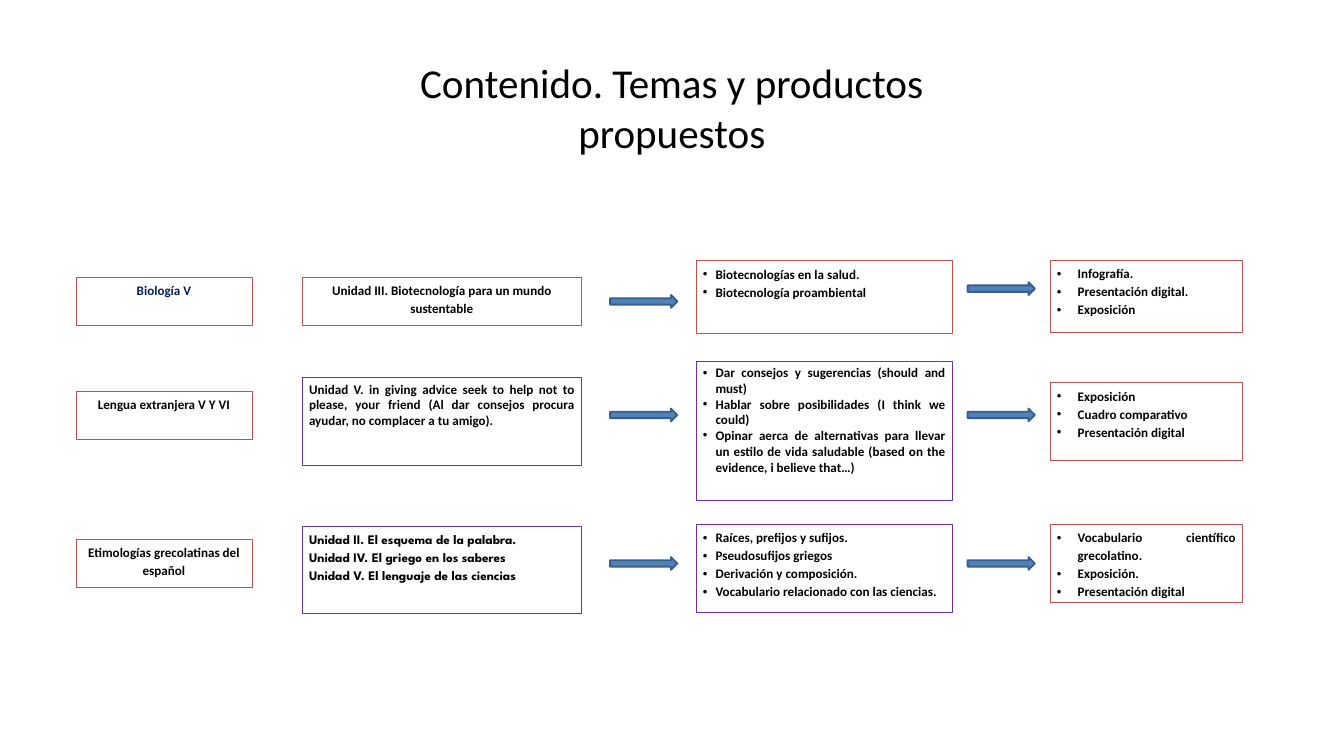
from lxml import etree
from pptx import Presentation
from pptx import util as u
from pptx.dml.color import RGBColor
from pptx.enum import shapes, text
from pptx.oxml.ns import qn

RED, PURPLE, BLACK, NAVY = "C0504D", "7030A0", "000000", "002060"
CENTER, LEFT, JUSTIFY = text.PP_ALIGN.CENTER, text.PP_ALIGN.LEFT, text.PP_ALIGN.JUSTIFY


def rgb(value):
    return RGBColor.from_string(value)


def add_bullet(paragraph, indent):
    """Give the paragraph a black round bullet with a hanging indent in inches."""
    props = paragraph._p.get_or_add_pPr()
    props.set("marL", str(u.Inches(indent)))
    props.set("indent", str(-u.Inches(indent)))
    colour = etree.SubElement(props, qn("a:buClr"))
    etree.SubElement(colour, qn("a:srgbClr"), val=BLACK)
    etree.SubElement(props, qn("a:buFont"), typeface="Arial")
    etree.SubElement(props, qn("a:buChar"), char="•")


prs = Presentation()
prs.slide_width, prs.slide_height = u.Inches(20), u.Inches(11.25)
slide = prs.slides.add_slide(prs.slide_layouts[5])

title = slide.shapes.title
title.left, title.top = u.Inches(5.75), u.Inches(0.79)
title.width, title.height = u.Inches(8.5), u.Inches(1.61)
title.text_frame.text = "Contenido. Temas y productos propuestos"
title.text_frame.vertical_anchor = text.MSO_ANCHOR.MIDDLE
heading = title.text_frame.paragraphs[0]
heading.alignment = CENTER
heading.font.size, heading.font.name = u.Pt(44), "Calibri"
heading.font.color.rgb = rgb(BLACK)

# Columns: subject, unit, topics, products -> left, width, bullet indent
columns = [(1.13, 2.62, 0), (4.5, 4.15, 0), (10.36, 3.81, 0.19), (15.63, 2.86, 0.31)]
arrow_columns = (9.08, 14.4)

# Each cell: top, height, border, text colour, font, alignment, line spacing, paragraphs
subjects = [
    ((4.12, 0.72, RED, NAVY, "Calibri", CENTER, 1.15, ["Biología V"]),
     (4.12, 0.72, RED, BLACK, "Calibri", CENTER, 1.15,
      ["Unidad III. Biotecnología para un mundo sustentable"]),
     (3.88, 1.08, RED, BLACK, "Calibri", JUSTIFY, 1.15,
      ["Biotecnologías en la salud.", "Biotecnología proambiental"]),
     (3.87, 1.08, RED, BLACK, "Calibri", JUSTIFY, 1.15,
      ["Infografía.", "Presentación digital.", "Exposición"])),
    ((5.82, 0.72, RED, BLACK, "Calibri", CENTER, 1.15, ["Lengua extranjera V Y VI"]),
     (5.62, 1.3, PURPLE, BLACK, "Calibri", JUSTIFY, 1,
      ["Unidad V. in giving advice seek to help not to please, your friend "
       "(Al dar consejos procura ayudar, no complacer a tu amigo)."]),
     (5.38, 2.06, PURPLE, BLACK, "Calibri", JUSTIFY, 1,
      ["Dar consejos y sugerencias (should and must)",
       "Hablar sobre posibilidades (I think we could)",
       "Opinar aerca de alternativas para llevar un estilo de vida saludable "
       "(based on the evidence, i believe that…)"]),
     (5.69, 1.16, RED, BLACK, "Calibri", JUSTIFY, 1.15,
      ["Exposición", "Cuadro comparativo", "Presentación digital"])),
    ((8.02, 0.72, RED, BLACK, "Calibri", CENTER, 1.15,
      ["Etimologías grecolatinas del español"]),
     (7.83, 1.3, PURPLE, BLACK, "League Spartan", LEFT, 1.15,
      ["Unidad II. El esquema de la palabra.", "Unidad IV. El griego en los saberes",
       "Unidad V. El lenguaje de las ciencias"]),
     (7.8, 1.32, PURPLE, BLACK, "Calibri", JUSTIFY, 1.15,
      ["Raíces, prefijos y sufijos.", "Pseudosufijos griegos",
       "Derivación y composición.", "Vocabulario relacionado con las ciencias."]),
     (7.8, 1.16, RED, BLACK, "Calibri", JUSTIFY, 1.15,
      ["Vocabulario científico grecolatino.", "Exposición.", "Presentación digital"])),
]
arrow_tops = [(4.39, 4.2), (6.08, 6.08), (8.29, 8.29)]

for cells, tops in zip(subjects, arrow_tops):
    for (left, width, indent), cell in zip(columns, cells):
        top, height, border, colour, font, alignment, spacing, lines = cell
        box = slide.shapes.add_shape(
            shapes.MSO_SHAPE.RECTANGLE,
            u.Inches(left), u.Inches(top), u.Inches(width), u.Inches(height))
        box.shadow.inherit = False
        box.fill.background()
        box.line.color.rgb, box.line.width = rgb(border), u.Pt(0.75)
        frame = box.text_frame
        frame.word_wrap = True
        frame.vertical_anchor = text.MSO_ANCHOR.TOP
        frame.text = "\n".join(lines)
        for paragraph in frame.paragraphs:
            paragraph.alignment, paragraph.line_spacing = alignment, spacing
            paragraph.font.size, paragraph.font.name = u.Pt(14), font
            paragraph.font.bold = True
            paragraph.font.color.rgb = rgb(colour)
            if indent:
                add_bullet(paragraph, indent)

    for left, top in zip(arrow_columns, tops):
        arrow = slide.shapes.add_shape(
            shapes.MSO_SHAPE.RIGHT_ARROW,
            u.Inches(left), u.Inches(top), u.Inches(1), u.Inches(0.19))
        arrow.shadow.inherit = False
        arrow.fill.solid()
        arrow.fill.fore_color.rgb = rgb("4F81BD")
        arrow.line.color.rgb, arrow.line.width = rgb("395E89"), u.Pt(2)

prs.save("out.pptx")
